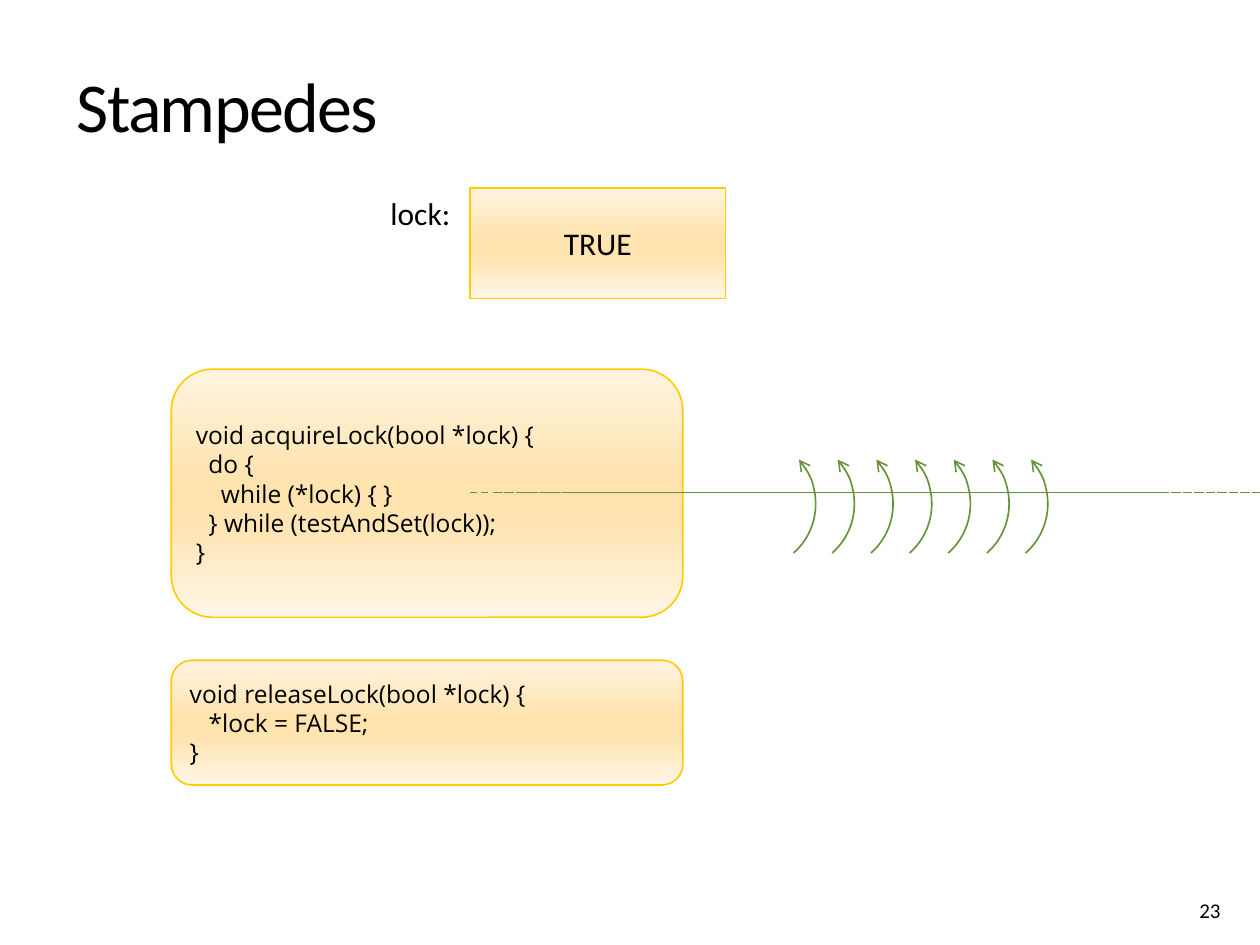
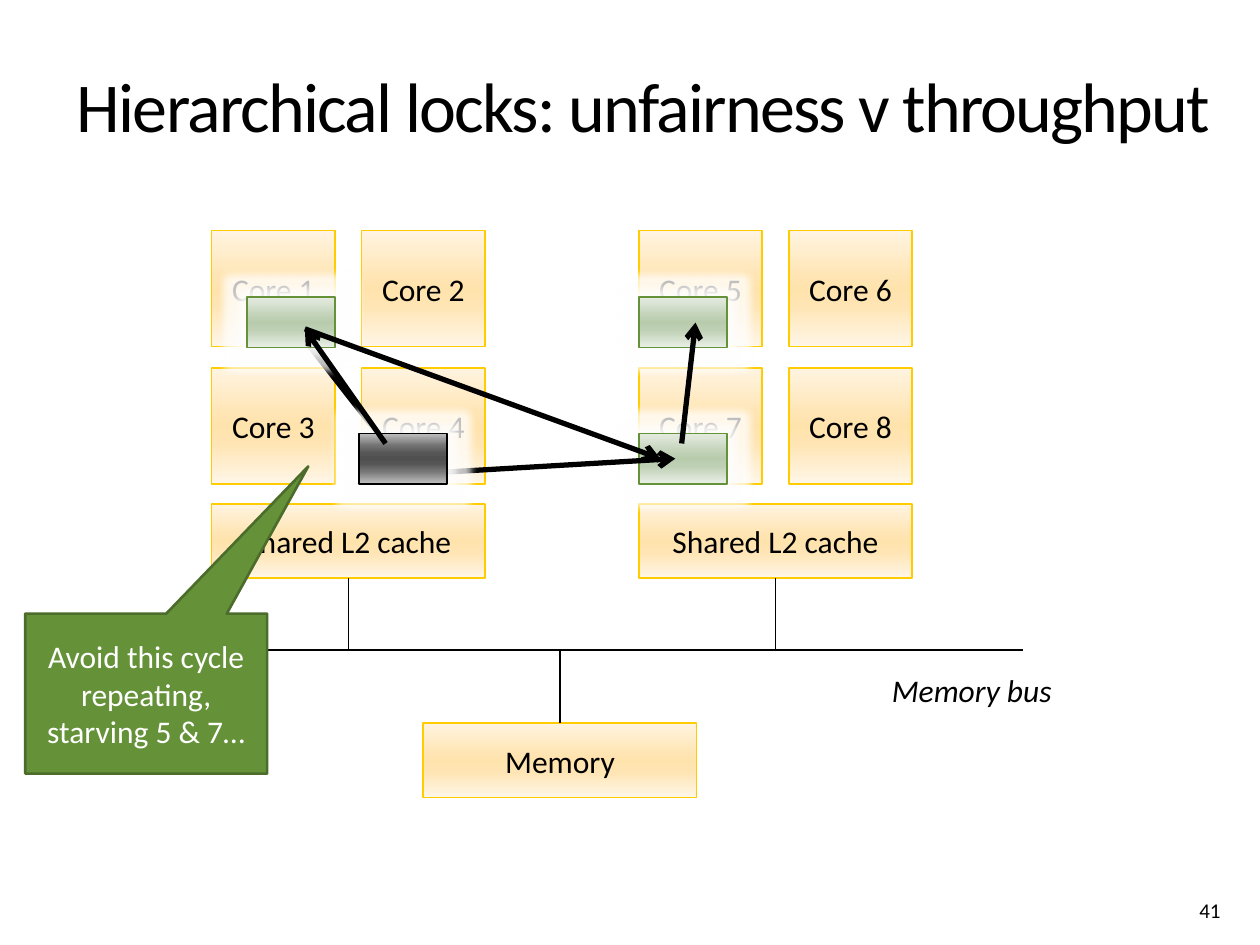
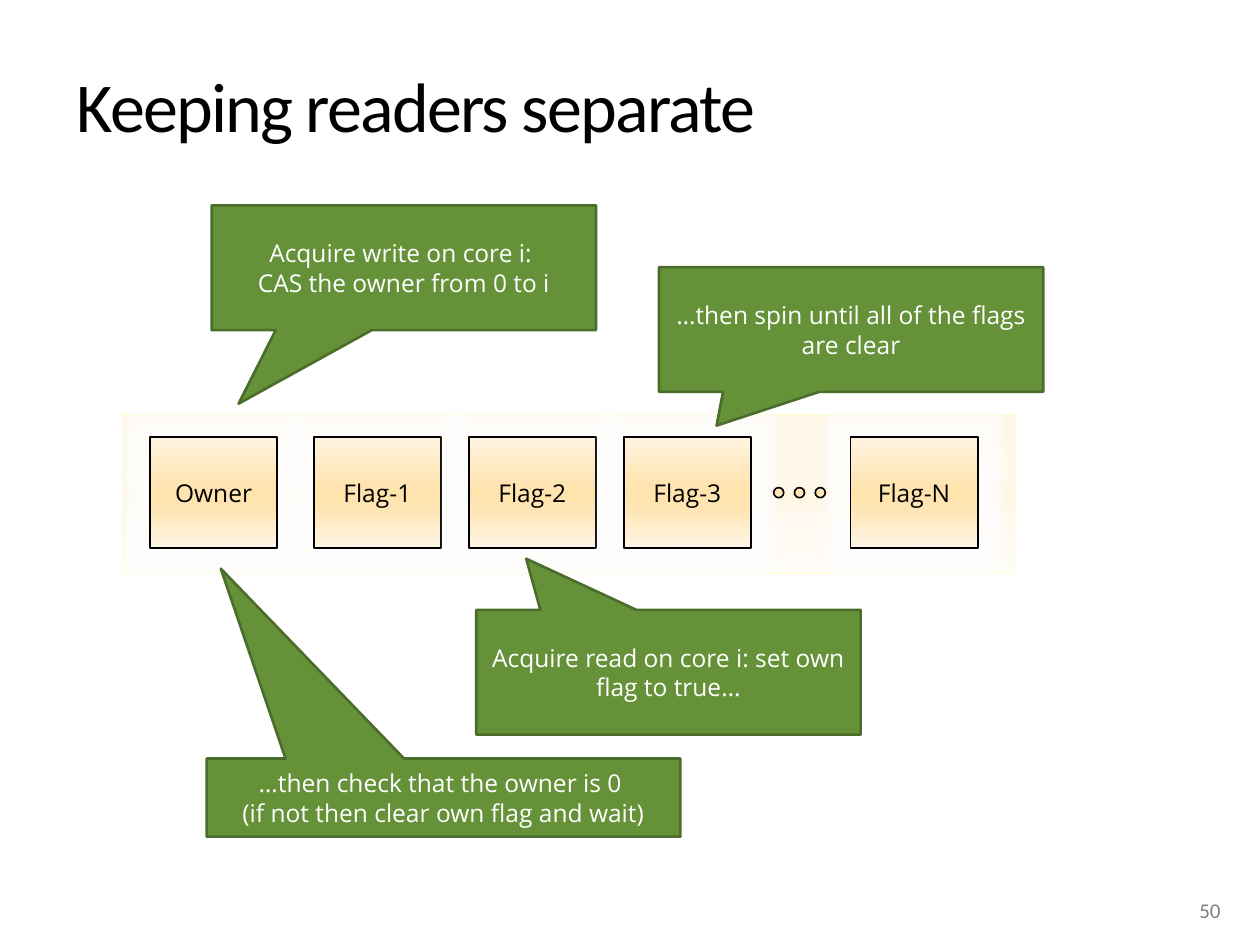
from lxml.etree import SubElement
from pptx import Presentation
from pptx.dml.color import RGBColor
from pptx.enum.dml import MSO_LINE
from pptx.enum.shapes import MSO_CONNECTOR, MSO_SHAPE
from pptx.enum.text import MSO_ANCHOR, MSO_AUTO_SIZE, PP_ALIGN
from pptx.oxml.ns import qn
from pptx.util import Inches, Pt

BLACK, WHITE, GREEN, DARK_GREEN = "000000", "FFFFFF", "659239", "4B6C2A"
GOLD, GREY = "FFCC00", "808080"
CREAM = [(0, "FFF4E1"), (40, "FFE5B4"), (50, "FFE3AD"), (65, "FFE5B4"), (100, "FFF6E7")]
SAGE = [(0, "E5EBE1"), (40, "BED0B4"), (50, "B8CCAD"), (65, "BED0B4"), (100, "EAEFE7")]
CHARCOAL = [(0, "C0C0C0"), (25, "707070"), (40, "555555"), (50, "505050"),
            (60, "555555"), (75, "767676"), (100, "C0C0C0")]
BAND = [(0, "FFF4E1", 75), (40, "FFF4DF", 50), (50, "FFF1C9", 50),
        (65, "FFF5E3", 50), (100, "FFFCF3", 50)]
SANS, CODE = "Calibri", "Open Sans"
RECT, CALLOUT = MSO_SHAPE.RECTANGLE, MSO_SHAPE.RECTANGULAR_CALLOUT


def add_box(s, kind, at, fill, line, text="", font=SANS, size=18, color=BLACK,
            weight=0.94, halo=False):
    sp = s.shapes.add_shape(kind, *[Inches(v) for v in at])
    sp.shadow.inherit = False
    if isinstance(fill, str):
        sp.fill.solid()
        sp.fill.fore_color.rgb = RGBColor.from_string(fill)
    else:
        sp.fill.gradient()
        sp.fill.gradient_angle = 270
        stops = sp._element.spPr.find(".//" + qn("a:gsLst"))
        stops.clear()
        for pos, rgb, *alpha in fill:
            gs = SubElement(stops, qn("a:gs"), pos=str(pos * 1000))
            clr = SubElement(gs, qn("a:srgbClr"), val=rgb)
            for a in alpha:
                SubElement(clr, qn("a:alpha"), val=str(a * 1000))
    if halo:
        effects = sp._element.spPr.find(qn("a:effectLst"))
        glow = SubElement(effects, qn("a:glow"), rad=str(Inches(0.12)))
        clr = SubElement(glow, qn("a:srgbClr"), val=WHITE)
        SubElement(clr, qn("a:alpha"), val="75000")
    sp.line.color.rgb = RGBColor.from_string(line)
    sp.line.width = Pt(weight)
    tf = sp.text_frame
    tf.word_wrap = True
    tf.vertical_anchor = MSO_ANCHOR.MIDDLE
    p = tf.paragraphs[0]
    p.text = text
    p.alignment = PP_ALIGN.CENTER
    p.font.name, p.font.size = font, Pt(size)
    p.font.color.rgb = RGBColor.from_string(color)
    return sp


def add_line(s, x1, y1, x2, y2, color=BLACK, weight=0.94, arrow=False):
    c = s.shapes.add_connector(MSO_CONNECTOR.STRAIGHT, *[Inches(v) for v in (x1, y1, x2, y2)])
    c.line.color.rgb = RGBColor.from_string(color)
    c.line.width = Pt(weight)
    if arrow:
        SubElement(c.line._get_or_add_ln(), qn("a:tailEnd"), type="arrow")
    SubElement(c._element.spPr, qn("a:effectLst"))
    return c


prs = Presentation()
prs.slide_width, prs.slide_height = Inches(10), Inches(7.5)

slides = []
for title, width in [("Stampedes", 8.82),
                     ("Hierarchical locks: unfairness v throughput", 9.49),
                     ("Keeping readers separate", 8.82)]:
    s = prs.slides.add_slide(prs.slide_layouts[5])
    sp = s.shapes.title
    sp.left, sp.top, sp.width, sp.height = [Inches(v) for v in (0.51, 0.56, width, 0.83)]
    tf = sp.text_frame
    tf.auto_size = MSO_AUTO_SIZE.NONE
    tf.vertical_anchor = MSO_ANCHOR.TOP
    p = tf.paragraphs[0]
    p.alignment = PP_ALIGN.LEFT
    p.line_spacing = Pt(40)
    r = p.add_run()
    r.text = title
    r.font.name, r.font.size = SANS, Pt(40)
    r.font.color.rgb = RGBColor.from_string(BLACK)
    r.font._element.set("spc", "-100")
    slides.append(s)
stampedes, hierarchy, readers = slides

PAGE = (9.42, 6.97, 0.5, 0.4)
for s, text, at, size, color, italic, anchor in [
    (stampedes, "lock:", (3, 1.49, 0.68, 0.4), 18, BLACK, False, MSO_ANCHOR.TOP),
    (stampedes, "23", PAGE, 12, BLACK, False, MSO_ANCHOR.BOTTOM),
    (hierarchy, "Memory bus", (6.98, 5.28, 1.5, 0.4), 18, BLACK, True, MSO_ANCHOR.TOP),
    (hierarchy, "41", PAGE, 12, BLACK, False, MSO_ANCHOR.BOTTOM),
    (readers, "50", PAGE, 12, GREY, False, MSO_ANCHOR.BOTTOM),
]:
    tf = s.shapes.add_textbox(*[Inches(v) for v in at]).text_frame
    tf.word_wrap = anchor == MSO_ANCHOR.BOTTOM
    tf.vertical_anchor = anchor
    p = tf.paragraphs[0]
    p.text = text
    p.font.name, p.font.size, p.font.italic = SANS, Pt(size), italic
    p.font.color.rgb = RGBColor.from_string(color)

s = stampedes
add_box(s, RECT, (3.73, 1.49, 2.03, 0.88), CREAM, GOLD, "TRUE")
for top, height, code in [
    (2.93, 1.97, [(0, "void acquireLock(bool *lock) {"), (0.1, "do {"),
                  (0.2, "while (*lock) { }"), (0.1, "} while (testAndSet(lock));"), (0, "}")]),
    (5.24, 0.99, [(0, "void releaseLock(bool *lock) {"), (0.15, "*lock = FALSE;"), (0, "}")]),
]:
    sp = add_box(s, MSO_SHAPE.ROUNDED_RECTANGLE, (1.36, top, 4.06, height), CREAM, GOLD)
    tf = sp.text_frame
    for i, (indent, text) in enumerate(code):
        p = tf.add_paragraph() if i else tf.paragraphs[0]
        p.text = text
        p.alignment = PP_ALIGN.LEFT
        p.font.name, p.font.size = CODE, Pt(14)
        p.font.color.rgb = RGBColor.from_string(BLACK)
        p._p.get_or_add_pPr().set("marL", str(Inches(indent)))

for x in (3.73, 3.94, 4.13, 4.31, 4.5, 4.84):
    c = add_line(s, x, 3.91, x + 5.5, 3.91, GREEN)
    c.line.dash_style = MSO_LINE.DASH
for i in range(7):
    sp = s.shapes.add_shape(MSO_SHAPE.ARC, Inches(5.42 + i * 0.307), Inches(3.47),
                            Inches(1.06), Inches(1.04))
    sp.rotation = 48.9
    sp.shadow.inherit = False
    sp.fill.background()
    sp.line.color.rgb = RGBColor.from_string(GREEN)
    sp.line.width = Pt(0.94)
    SubElement(sp.line._get_or_add_ln(), qn("a:headEnd"), type="arrow")

s = hierarchy
caches = []
for group, left in enumerate((1.68, 5.07)):
    for i in range(4):
        row, col = divmod(i, 2)
        add_box(s, RECT, (left + col * 1.19, 1.83 + row * 1.09, 0.98, 0.92), CREAM, GOLD,
                f"Core {group * 4 + i + 1}")
    caches.append(add_box(s, RECT, (left, 4, 2.17, 0.59), CREAM, GOLD, "Shared L2 cache"))
add_line(s, 1.07, 5.16, 8.12, 5.16)
for cache, x in zip(caches, (2.765, 6.155)):
    add_line(s, x, 4.59, x, 5.16).begin_connect(cache, 2)
memory = add_box(s, RECT, (3.36, 5.74, 2.17, 0.59), CREAM, GOLD, "Memory")
add_line(s, 4.445, 5.16, 4.445, 5.74).end_connect(memory, 0)

for y in (2.36, 3.44):
    add_box(s, RECT, (5.07, y, 0.7, 0.4), SAGE, GREEN, halo=True)
for ends in [(2.31, 2.56, 3.2, 3.7), (5.41, 3.52, 5.52, 2.56), (3.48, 3.75, 5.36, 3.64)]:
    add_line(s, *ends, weight=3, arrow=True)
add_box(s, RECT, (2.85, 3.44, 0.7, 0.4), CHARCOAL, BLACK, halo=True)
add_box(s, RECT, (1.96, 2.36, 0.7, 0.4), SAGE, GREEN, halo=True)
for ends in [(2.42, 2.61, 5.24, 3.64), (3.06, 3.52, 2.42, 2.61)]:
    add_line(s, *ends, weight=3, arrow=True)

s = readers
add_box(s, RECT, (0.97, 3.29, 7.09, 1.26), BAND, "FFFFCC", weight=0.25)
for x, text in [(1.19, "Owner"), (2.49, "Flag-1"), (3.72, "Flag-2"),
                (4.95, "Flag-3"), (6.75, "Flag-N")]:
    add_box(s, RECT, (x, 3.47, 1.01, 0.88), CREAM, BLACK, text, CODE, 14, halo=True)
for i in range(3):
    add_box(s, MSO_SHAPE.OVAL, (6.14 + i * 0.165, 3.87, 0.08, 0.08), CREAM, BLACK)

for s, at, tip, text, font, size in [
    (hierarchy, (0.2, 4.87, 1.92, 1.27), (0.67, -1.42),
     "Avoid this cycle repeating, starving 5 & 7…", SANS, 18),
    (readers, (1.68, 1.63, 3.05, 0.99), (-0.43, 1.09),
     "Acquire write on core i: \vCAS the owner from 0 to i", CODE, 14),
    (readers, (5.23, 2.12, 3.05, 0.99), (-0.35, 0.77),
     "…then spin until all of the flags are clear", CODE, 14),
    (readers, (1.64, 6.02, 3.76, 0.62), (-0.47, -2.93),
     "…then check that the owner is 0 \v(if not then clear own flag and wait)", CODE, 14),
    (readers, (3.78, 4.84, 3.05, 0.99), (-0.37, -0.91),
     "Acquire read on core i: set own flag to true…", CODE, 14),
]:
    sp = add_box(s, CALLOUT, at, GREEN, DARK_GREEN, text, font, size, WHITE, 1.5)
    sp.adjustments[0], sp.adjustments[1] = tip

prs.save("out.pptx")
